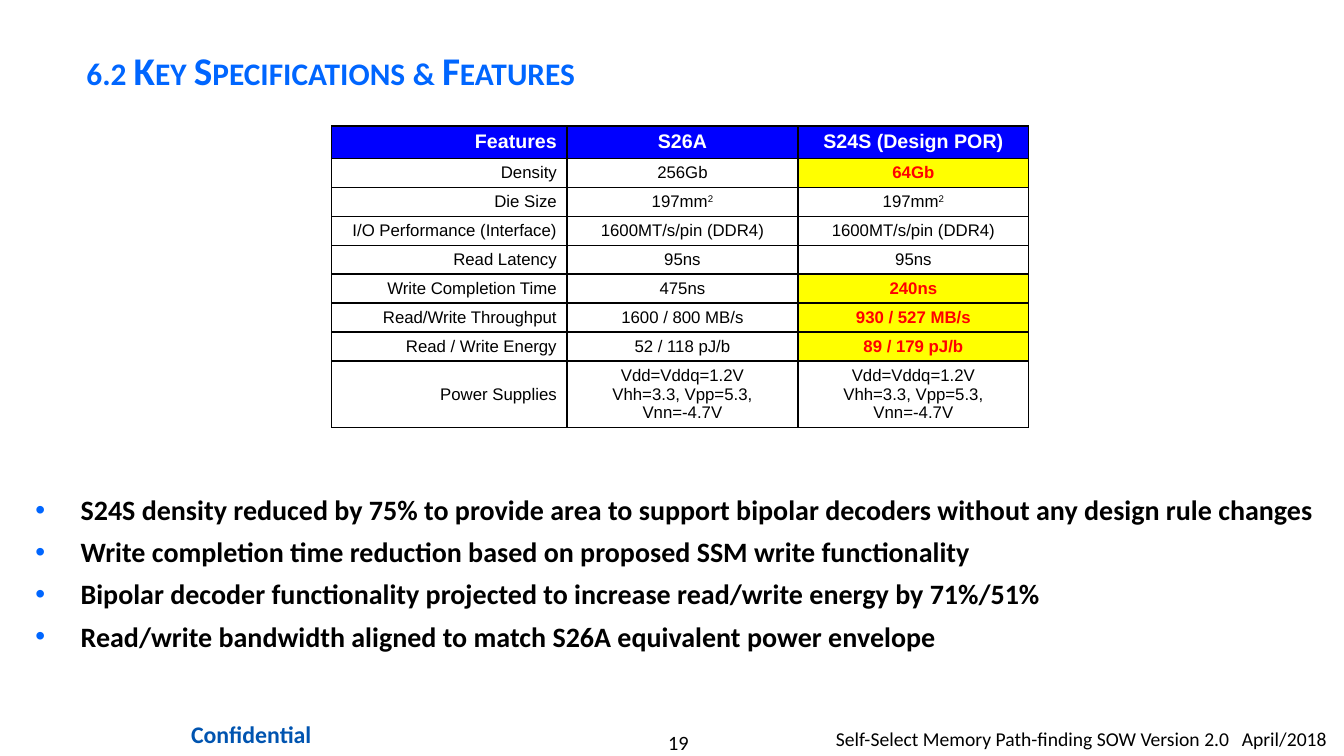
import pptx
import pptx.util
import pptx.dml.color
import pptx.enum.text
import pptx.oxml
import pptx.oxml.ns

Pt = pptx.util.Pt
ALIGN = pptx.enum.text.PP_ALIGN
MIDDLE = pptx.enum.text.MSO_ANCHOR.MIDDLE
COLORS = {
    "black": "000000", "white": "FFFFFF", "title": "0066FF", "head": "0000FF",
    "mark": "FFFF00", "red": "FF0000", "secret": "0054B0",
}
SUPPLY = "Vdd=Vddq=1.2V\nVhh=3.3, Vpp=5.3, Vnn=-4.7V"
SPECS = [
    ("Features", "S26A", "S24S (Design POR)"),
    ("Density", "256Gb", "64Gb"),
    ("Die Size", "197mm^2", "197mm^2"),
    ("I/O Performance (Interface)", "1600MT/s/pin (DDR4)", "1600MT/s/pin (DDR4)"),
    ("Read Latency", "95ns", "95ns"),
    ("Write Completion Time", "475ns", "240ns"),
    ("Read/Write Throughput", "1600 / 800 MB/s", "930 / 527 MB/s"),
    ("Read / Write Energy", "52 / 118 pJ/b", "89 / 179 pJ/b"),
    ("Power Supplies", SUPPLY, SUPPLY),
]
CHANGED = {"Density", "Write Completion Time", "Read/Write Throughput",
           "Read / Write Energy"}
POINTS = [
    "S24S density reduced by 75% to provide area to support bipolar decoders "
    "without any design rule changes",
    "Write completion time reduction based on proposed SSM write functionality",
    "Bipolar decoder functionality projected to increase read/write energy by 71%/51%",
    "Read/write bandwidth aligned to match S26A equivalent power envelope",
]


def rgb(name):
    return pptx.dml.color.RGBColor.from_string(COLORS[name])


def make(xml):
    """Parse one DrawingML element given without its namespace."""
    space = pptx.oxml.ns.nsdecls("a")
    return pptx.oxml.parse_xml(xml.replace(" ", f" {space} ", 1))


def write(frame, text, size, color="black", bold=False, font="Calibri",
          align=ALIGN.LEFT, gap=0, line=None, caps=False, bullet=None, tab=None):
    """Fill a frame, one paragraph a line; ^ starts a superscript."""
    for i, words in enumerate(text.split("\n")):
        para = frame.add_paragraph() if i else frame.paragraphs[0]
        props = para._p.get_or_add_pPr()
        if bullet:
            props.set("marL", str(Pt(32.4)))
            props.set("indent", str(-Pt(32.4)))
            props.append(make(f'<a:buClr ><a:srgbClr val="{COLORS[bullet]}"/></a:buClr>'))
            props.append(make('<a:buFont typeface="Arial"/>'))
            props.append(make('<a:buChar char="•"/>'))
        if tab:
            props.append(make(f'<a:tabLst ><a:tab pos="{Pt(tab)}" algn="l"/></a:tabLst>'))
        para.alignment = align
        para.space_before = Pt(gap if i else 0)
        if line:
            para.line_spacing = line
        for j, part in enumerate(words.split("^")):
            run = para.add_run()
            run.text = part
            run.font.size, run.font.bold, run.font.name = Pt(size), bold, font
            run.font.color.rgb = rgb(color)
            mode = run._r.get_or_add_rPr()
            if j:
                mode.set("baseline", "30000")
            if caps:
                mode.set("cap", "small")


def place(shape, left, top, width, height):
    shape.left, shape.top = Pt(left), Pt(top)
    shape.width, shape.height = Pt(width), Pt(height)
    shape.text_frame.word_wrap = True
    shape.text_frame.auto_size = pptx.enum.text.MSO_AUTO_SIZE.NONE
    return shape.text_frame


def label(slide, text, box, pad, **form):
    """Add a text box with (side, end) insets."""
    frame = place(slide.shapes.add_textbox(0, 0, 0, 0), *box)
    frame.margin_left = frame.margin_right = Pt(pad[0])
    frame.margin_top = frame.margin_bottom = Pt(pad[1])
    write(frame, text, **form)


def paint(cell, fill):
    """Give a cell black borders and a plain fill."""
    props = cell._tc.get_or_add_tcPr()
    for side in "LRTB":
        props.append(make(
            f'<a:ln{side} w="{Pt(1)}"><a:solidFill><a:srgbClr '
            f'val="{COLORS["black"]}"/></a:solidFill></a:ln{side}>'))
    cell.fill.solid()
    cell.fill.fore_color.rgb = rgb(fill)


def add_specs(slide):
    widths = [168, 165, 165]
    heights = [23] + [20.7] * 7 + [47.5]
    grid = slide.shapes.add_table(len(SPECS), len(widths), Pt(237), Pt(90),
                                  Pt(sum(widths)), Pt(sum(heights))).table
    grid.first_row = grid.horz_banding = False
    for col, width in zip(grid.columns, widths):
        col.width = Pt(width)
    for r, texts in enumerate(SPECS):
        grid.rows[r].height = Pt(heights[r])
        for c, text in enumerate(texts):
            cell = grid.cell(r, c)
            marked = c == 2 and texts[0] in CHANGED
            if r == 0:
                fill, color = "head", "white"
            elif marked:
                fill, color = "mark", "red"
            else:
                fill, color = "white", "black"
            paint(cell, fill)
            cell.vertical_anchor = MIDDLE
            cell.margin_top = cell.margin_bottom = Pt(3)
            write(cell.text_frame, text, 12 if r else 14, color,
                  bold=r == 0 or marked, font="Arial",
                  align=ALIGN.CENTER if c else ALIGN.RIGHT)


def main():
    deck = pptx.Presentation()
    deck.slide_width, deck.slide_height = Pt(960), Pt(540)
    slide = deck.slides.add_slide(deck.slide_layouts[1])

    label(slide, "19", (400.5, 521.5, 168, 17.5), (0, 0), size=14.5, align=ALIGN.CENTER)
    label(slide, "Confidential", (111.5, 510, 136, 29.5), (8.6, 4.3), size=17,
          color="secret", bold=True, align=ALIGN.CENTER)
    label(slide, "Self-Select Memory Path-finding SOW Version 2.0\tApril/2018",
          (597, 515.5, 363, 24.5), (0, 3.6), size=14, tab=290)

    title = place(slide.shapes.title, 54.5, 15, 796.5, 66)
    title.vertical_anchor = MIDDLE
    write(title, "6.2 Key Specifications & Features", 28, "title", bold=True,
          line=1.1, caps=True)
    body = place(slide.placeholders[1], 18, 348.5, 932.5, 132)
    write(body, "\n".join(POINTS), 20, bold=True, gap=6, bullet="title")
    add_specs(slide)
    deck.save("out.pptx")


if __name__ == "__main__":
    main()
